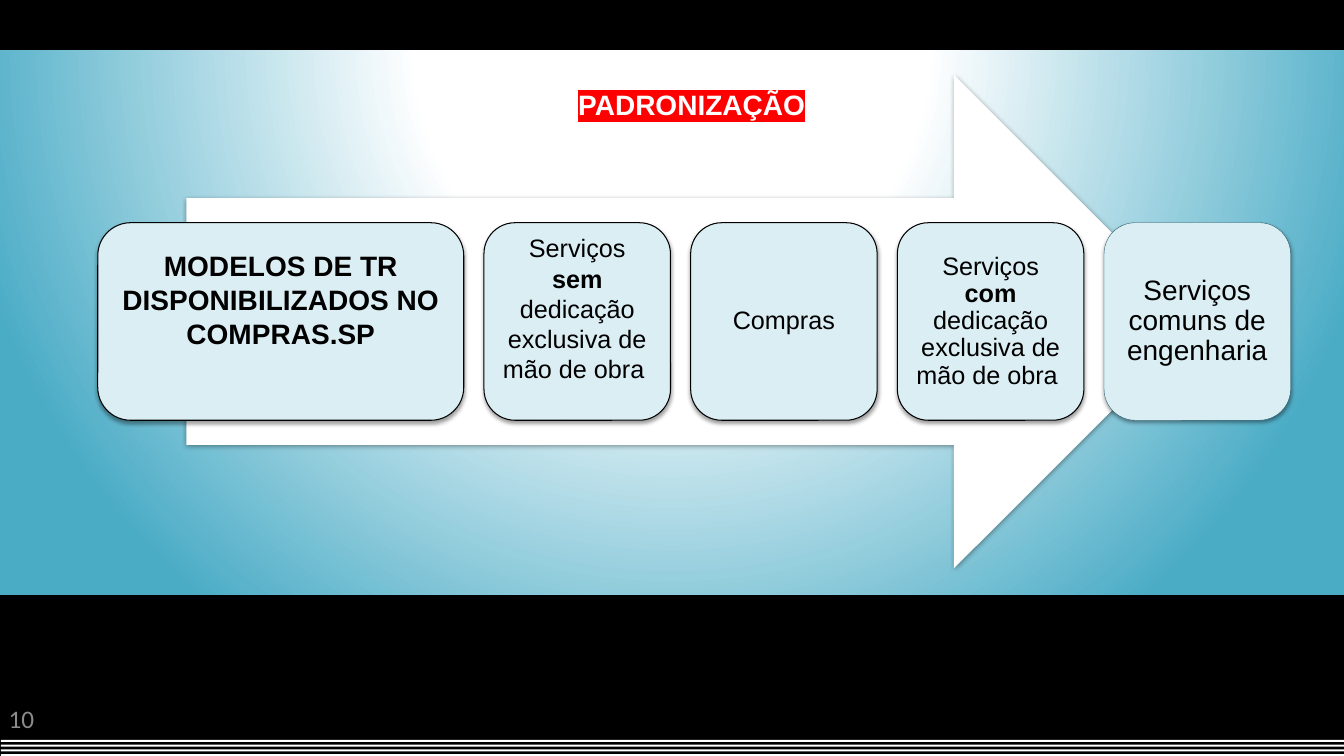
from dataclasses import dataclass

from lxml import etree
from pptx import Presentation
from pptx.dml.color import RGBColor
from pptx.enum.shapes import MSO_SHAPE
from pptx.enum.text import MSO_ANCHOR, MSO_AUTO_SIZE, PP_ALIGN
from pptx.oxml import parse_xml
from pptx.oxml.ns import nsdecls, qn
from pptx.shapes.autoshape import Shape
from pptx.slide import Slide
from pptx.util import Inches, Pt

RECTANGLE = MSO_SHAPE.RECTANGLE
ROUNDED = MSO_SHAPE.ROUNDED_RECTANGLE
RIGHT_ARROW = MSO_SHAPE.RIGHT_ARROW
TOP, MIDDLE = MSO_ANCHOR.TOP, MSO_ANCHOR.MIDDLE
CENTER, RIGHT = PP_ALIGN.CENTER, PP_ALIGN.RIGHT
NO_AUTOFIT = MSO_AUTO_SIZE.NONE
TITLE_ONLY = 5

BLACK, WHITE, RED = "000000", "FFFFFF", "FF0000"
PALE_BLUE, DARK_TEAL, TEAL = "DBEEF4", "215968", "4BACC6"
CARD_TOP, CARD_HEIGHT, CARD_GAP = 2.21, 1.96, 0.2
STRIPE_COUNT, STRIPE_STEP = 4, 0.047


@dataclass(frozen=True)
class Span:
    text: str
    bold: bool = False


@dataclass(frozen=True)
class Card:
    spans: tuple[Span, ...]
    width: float = 1.85
    size: int = 18
    inset: float = 0.08
    lift: float = 0
    line_spacing: float = 0.9
    line_color: str = BLACK
    line_width: float = 0.75


CARDS = (
    Card((Span("MODELOS DE TR DISPONIBILIZADOS NO COMPRAS.SP", True),),
         width=3.63, size=20, inset=0.06, lift=0.22, line_spacing=1),
    Card((Span("Serviços "), Span("sem", True),
          Span(" dedicação exclusiva de mão de obra ")),
         lift=0.13, line_spacing=1),
    Card((Span("Compras"),)),
    Card((Span("Serviços "), Span("com ", True),
          Span("dedicação exclusiva de mão de obra "))),
    Card((Span("Serviços comuns de engenharia"),),
         size=20, line_color=DARK_TEAL, line_width=0.25),
)


def rgb(color: str) -> RGBColor:
    return RGBColor.from_string(color)


def add_filled(page: Slide, kind: MSO_SHAPE, left: float, top: float,
               width: float, height: float, color: str) -> Shape:
    shape = page.shapes.add_shape(kind, Inches(left), Inches(top),
                                  Inches(width), Inches(height))
    shape.shadow.inherit = False
    shape.fill.solid()
    shape.fill.fore_color.rgb = rgb(color)
    shape.line.fill.background()
    return shape


def add_soft_shadow(shape: Shape) -> None:
    effects = shape._element.spPr.find(qn("a:effectLst"))
    effects.append(parse_xml(
        f'<a:outerShdw {nsdecls("a")} blurRad="{Pt(3.1)}" dist="{Pt(1.6)}" '
        f'dir="5400000" rotWithShape="0"><a:srgbClr val="{BLACK}">'
        '<a:alpha val="38000"/></a:srgbClr></a:outerShdw>'))


def set_insets(shape: Shape, left: float, top: float,
               right: float, bottom: float) -> None:
    frame = shape.text_frame
    frame.margin_left, frame.margin_top = Inches(left), Inches(top)
    frame.margin_right, frame.margin_bottom = Inches(right), Inches(bottom)


def fill_radial(shape: Shape) -> None:
    """Fill with a glow that is white at the top and teal at the rim."""
    shape.fill.solid()
    solid = shape._element.spPr.find(qn("a:solidFill"))
    stops = "".join(
        f'<a:gs pos="{position * 1000}"><a:srgbClr val="{color}"/></a:gs>'
        for position, color in ((0, WHITE), (35, WHITE), (100, TEAL)))
    solid.getparent().replace(solid, parse_xml(
        f'<a:gradFill {nsdecls("a")} rotWithShape="1"><a:gsLst>{stops}</a:gsLst>'
        '<a:path path="circle"><a:fillToRect l="50000" t="-80000" '
        'r="50000" b="180000"/></a:path></a:gradFill>'))


def add_title(page: Slide) -> None:
    title = page.shapes.title
    title.left, title.top = Inches(0), Inches(0.5)
    title.width, title.height = Inches(13.33), Inches(5.4)
    fill_radial(title)
    set_insets(title, 0.39, 0.37, 0, 0)
    frame = title.text_frame
    frame.auto_size, frame.vertical_anchor = NO_AUTOFIT, TOP
    para = frame.paragraphs[0]
    para.alignment = CENTER
    span = para.add_run()
    span.text = "PADRONIZAÇÃO"
    span.font.size, span.font.bold = Pt(20), True
    span.font.color.rgb = rgb(WHITE)
    highlight = etree.SubElement(span.font._element, qn("a:highlight"))
    etree.SubElement(highlight, qn("a:srgbClr"), val=RED)
    span.font.name = "Arial"


def add_card(page: Slide, card: Card, left: float) -> None:
    box = add_filled(page, ROUNDED, left, CARD_TOP, card.width, CARD_HEIGHT,
                     PALE_BLUE)
    box.line.color.rgb = rgb(card.line_color)
    box.line.width = Pt(card.line_width)
    add_soft_shadow(box)
    set_insets(box, card.inset, card.inset, card.inset,
               card.inset + 2 * card.lift)
    frame = box.text_frame
    frame.word_wrap, frame.vertical_anchor = True, MIDDLE
    para = frame.paragraphs[0]
    para.alignment, para.line_spacing = CENTER, card.line_spacing
    para.font.name, para.font.size = "Arial", Pt(card.size)
    para.font.color.rgb = rgb(BLACK)
    for part in card.spans:
        span = para.add_run()
        span.text, span.font.bold = part.text, part.bold
        span.font.color.rgb = rgb(BLACK)


def add_page_number(page: Slide) -> None:
    box = page.shapes.add_textbox(Inches(0.01), Inches(6.98),
                                  Inches(0.33), Inches(0.35))
    set_insets(box, 0, 0, 0, 0)
    box.text_frame.word_wrap = True
    para = box.text_frame.paragraphs[0]
    para.text, para.alignment = "10", RIGHT
    para.font.name, para.font.size = "Calibri", Pt(18)
    para.font.color.rgb = rgb("8C8C8C")


def main() -> None:
    deck = Presentation()
    deck.slide_width, deck.slide_height = Inches(13.33), Inches(7.5)
    page = deck.slides.add_slide(deck.slide_layouts[TITLE_ONLY])
    page.background.fill.solid()
    page.background.fill.fore_color.rgb = rgb(BLACK)

    add_title(page)
    for row in range(STRIPE_COUNT):
        add_filled(page, RECTANGLE, 0.01, 7.34 + row * STRIPE_STEP,
                   13.32, 0.02, WHITE)
    add_page_number(page)

    arrow = add_filled(page, RIGHT_ARROW, 1.85, 0.74, 10.06, 4.9, WHITE)
    add_soft_shadow(arrow)
    left = 0.97
    for card in CARDS:
        add_card(page, card, left)
        left += card.width + CARD_GAP

    deck.save("out.pptx")


if __name__ == "__main__":
    main()
